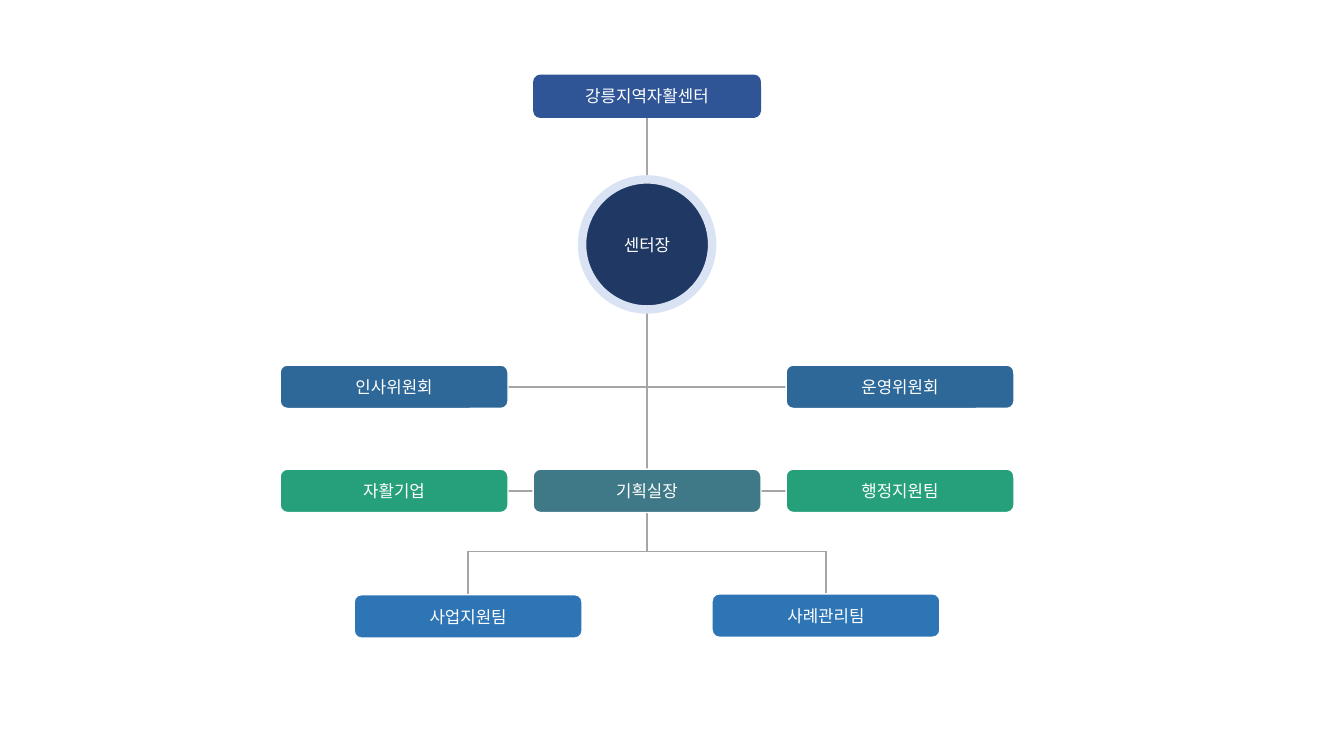
from dataclasses import dataclass

from pptx import Presentation
from pptx.dml.color import RGBColor
from pptx.enum import shapes, text
from pptx.oxml.ns import qn
from pptx.util import Pt


@dataclass(frozen=True)
class Theme:
    font: str = "Noto Sans CJK KR"
    size: float = 12
    white: str = "FFFFFF"
    line: str = "A5A5A5"
    center: str = "2F5597"
    director: str = "203864"
    ring: str = "DAE3F3"
    committee: str = "2D6899"
    planning: str = "3F7987"
    support: str = "26A07A"
    team: str = "2E75B6"


THEME = Theme()
AXIS = 462.2
BOX_WIDTH, BOX_HEIGHT = 162.8, 31
SIDE, TEAM = 180.7, 127.8
DIRECTOR_Y, DIRECTOR_SIZE = 174.6, 92.9
CENTER_Y, COMMITTEE_Y, PLANNING_Y, BRANCH_Y, TEAM_Y = 68.8, 276.3, 350.6, 393.8, 440

BOXES = [
    ("강릉지역자활센터", 0, CENTER_Y, THEME.center, None),
    ("인사위원회", -SIDE, COMMITTEE_Y, THEME.committee, THEME.white),
    ("운영위원회", SIDE, COMMITTEE_Y, THEME.committee, THEME.white),
    ("기획실장", 0, PLANNING_Y, THEME.planning, THEME.white),
    ("자활기업", -SIDE, PLANNING_Y, THEME.support, THEME.white),
    ("행정지원팀", SIDE, PLANNING_Y, THEME.support, THEME.white),
    ("사업지원팀", -TEAM, TEAM_Y + 0.3, THEME.team, THEME.white),
    ("사례관리팀", TEAM, TEAM_Y - 0.3, THEME.team, THEME.white),
]

HALF_WIDTH, HALF_HEIGHT = BOX_WIDTH / 2, BOX_HEIGHT / 2
RADIUS = DIRECTOR_SIZE / 2
INNER = SIDE - HALF_WIDTH
LINES = [
    (0, CENTER_Y + HALF_HEIGHT, 0, DIRECTOR_Y - RADIUS),
    (0, DIRECTOR_Y + RADIUS, 0, PLANNING_Y - HALF_HEIGHT),
    (-INNER, COMMITTEE_Y, INNER, COMMITTEE_Y),
    (-INNER, PLANNING_Y, -HALF_WIDTH, PLANNING_Y),
    (HALF_WIDTH, PLANNING_Y, INNER, PLANNING_Y),
    (0, PLANNING_Y + HALF_HEIGHT, 0, BRANCH_Y),
    (-TEAM, BRANCH_Y, TEAM, BRANCH_Y),
    (-TEAM, BRANCH_Y, -TEAM, TEAM_Y - HALF_HEIGHT),
    (TEAM, BRANCH_Y, TEAM, TEAM_Y - HALF_HEIGHT),
]


def color(value):
    return RGBColor.from_string(value)


def add_line(page, x1, y1, x2, y2):
    line = page.shapes.add_connector(
        shapes.MSO_CONNECTOR.STRAIGHT, Pt(AXIS + x1), Pt(y1), Pt(AXIS + x2), Pt(y2))
    line.line.color.rgb = color(THEME.line)
    line.line.width = Pt(1)
    properties = line._element.spPr
    properties.append(properties.makeelement(qn("a:effectLst"), {}))


def add_node(page, kind, label, offset, middle, width, height, fill, outline, weight=1):
    node = page.shapes.add_shape(
        kind, Pt(AXIS + offset - width / 2), Pt(middle - height / 2), Pt(width), Pt(height))
    node.shadow.inherit = False
    node.fill.solid()
    node.fill.fore_color.rgb = color(fill)
    if outline:
        node.line.color.rgb = color(outline)
        node.line.width = Pt(weight)
    else:
        node.line.fill.background()
    frame = node.text_frame
    frame.word_wrap = True
    frame.vertical_anchor = text.MSO_ANCHOR.MIDDLE
    para = frame.paragraphs[0]
    para.alignment = text.PP_ALIGN.CENTER
    span = para.add_run()
    span.text = label
    span.font.name = THEME.font
    span.font.size = Pt(THEME.size)
    span.font.color.rgb = color(THEME.white)
    properties = span.font._element
    properties.append(properties.makeelement(qn("a:ea"), {"typeface": THEME.font}))


def main():
    deck = Presentation()
    deck.slide_width, deck.slide_height = Pt(960), Pt(540)
    page = deck.slides.add_slide(deck.slide_layouts[6])
    for ends in LINES:
        add_line(page, *ends)
    for label, offset, middle, fill, outline in BOXES:
        add_node(page, shapes.MSO_SHAPE.ROUNDED_RECTANGLE, label, offset, middle,
                 BOX_WIDTH, BOX_HEIGHT, fill, outline)
    add_node(page, shapes.MSO_SHAPE.OVAL, "센터장", 0, DIRECTOR_Y,
             DIRECTOR_SIZE, DIRECTOR_SIZE, THEME.director, THEME.ring, 6)
    deck.save("out.pptx")


if __name__ == "__main__":
    main()
